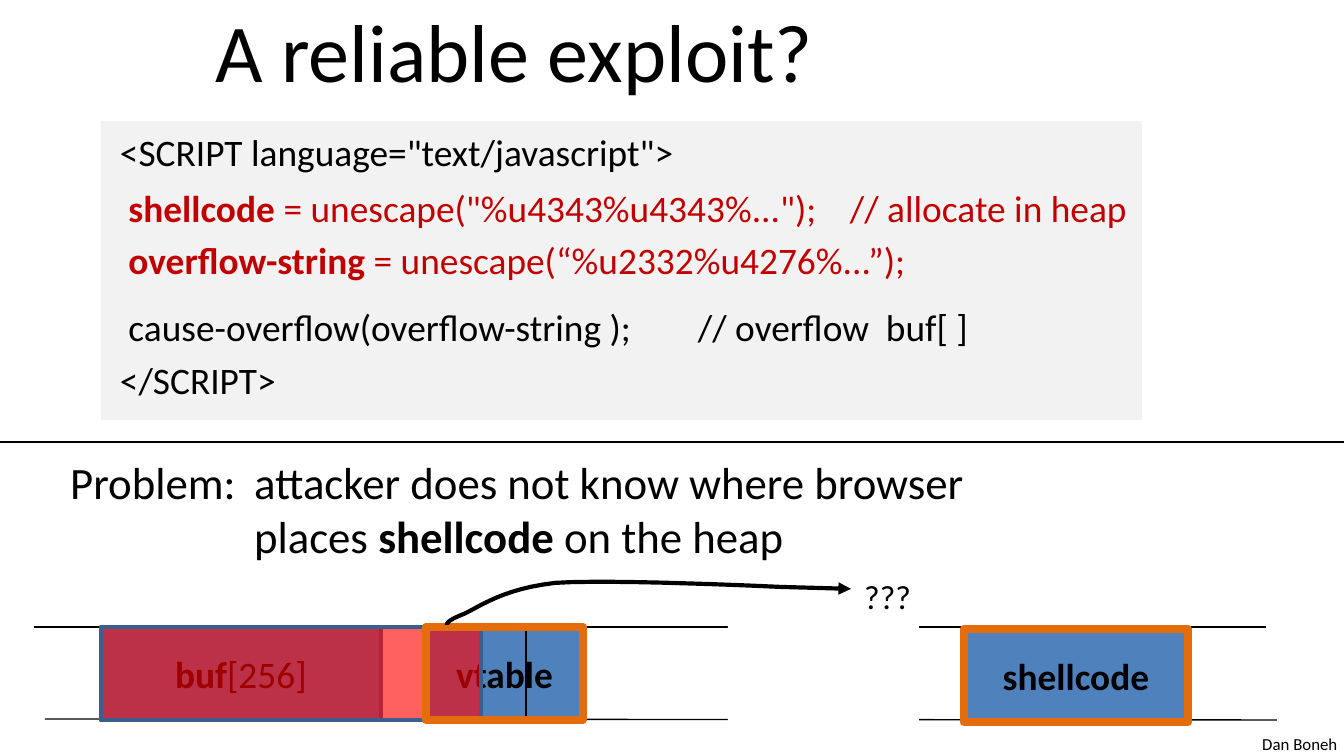
from lxml.etree import SubElement
from pptx import Presentation
from pptx.dml.color import RGBColor
from pptx.enum.shapes import MSO_CONNECTOR as CONNECTOR, MSO_SHAPE as SHAPE
from pptx.enum.text import MSO_ANCHOR as ANCHOR, PP_ALIGN as ALIGN
from pptx.oxml.ns import qn
from pptx.util import Pt

PX = 914400 / 134.4  # EMU in one px
COLORS = {
    "black": "000000", "white": "FFFFFF", "panel": "F2F2F2", "code": "C00000",
    "block": "4F81BD", "edge": "3A5F8C", "overflow": "FF0000", "highlight": "E46C0A",
}


def add_box(box, fill=None, line=None, width=2):
    shape = slide.shapes.add_shape(SHAPE.RECTANGLE, *[round(v * PX) for v in box])
    shape.shadow.inherit = False
    if fill:
        shape.fill.solid()
        shape.fill.fore_color.rgb = RGBColor.from_string(COLORS[fill])
    else:
        shape.fill.background()
    if line:
        shape.line.color.rgb = RGBColor.from_string(COLORS[line])
        shape.line.width = Pt(width)
    else:
        shape.line.fill.background()
    return shape


def write(paragraph, parts, size, color="black"):
    """Fill a paragraph with (text, bold) parts."""
    for text, bold in parts:
        run = paragraph.add_run()
        run.text = text
        run.font.name = "Calibri"
        run.font.size = Pt(size)
        run.font.bold = bold
        run.font.color.rgb = RGBColor.from_string(COLORS[color])


presentation = Presentation()
presentation.slide_width = round(1344 * PX)
presentation.slide_height = round(756 * PX)
slide = presentation.slides.add_slide(presentation.slide_layouts[6])

# Code panel: parts, colour, space before, tab stop in px
code_lines = [
    ([('<SCRIPT language="text/javascript">', False)], "black", 0, None),
    ([(" ", False), ("shellcode", True),
      (' = unescape("%u4343%u4343%...");\t// allocate in heap', False)], "code", 6, 730),
    ([(" ", False), ("overflow-string", True),
      (" = unescape(“%u2332%u4276%...”);", False)], "code", 4, None),
    ([(" cause-overflow(overflow-string );\t// overflow  buf[ ]", False)], "black", 12, 578),
    ([("</SCRIPT>", False)], "black", 4, None),
]
panel = add_box((101, 121, 1041, 299), "panel")
frame = panel.text_frame
frame.word_wrap = True
frame.vertical_anchor = ANCHOR.TOP
frame.margin_left, frame.margin_right = round(19 * PX), 0
frame.margin_top = round(8 * PX)
for index, (parts, color, space, tab) in enumerate(code_lines):
    paragraph = frame.add_paragraph() if index else frame.paragraphs[0]
    paragraph.alignment = ALIGN.LEFT
    paragraph.space_before = Pt(space)
    write(paragraph, parts, 20, color)
    if tab:
        tabs = SubElement(paragraph._p.get_or_add_pPr(), qn("a:tabLst"))
        SubElement(tabs, qn("a:tab"), pos=str(round(tab * PX)), algn="l")

# Title, problem statement, unknown address, footer
labels = [
    ((202, 0, 1008, 100), [("A reliable exploit?", False)], 44, ANCHOR.MIDDLE, 0),
    ((57, 448, 1210, 124), [("Problem:\tattacker does not know where browser \vplaces ", False),
                            ("shellcode", True), (" on the heap", False)], 24, ANCHOR.TOP, 184),
    ((851, 569, 74, 53), [("???", False)], 18, ANCHOR.TOP, 0),
    ((1249, 727, 95, 29), [("Dan Boneh", False)], 9, ANCHOR.TOP, 0),
]

# Memory blocks
buffer_box = (101, 627, 280, 93)
vtable_box = (426, 627, 157, 93)
shellcode_box = (964, 629, 224, 93)
overflow_box = (101, 627, 380, 93)
blocks = [
    (buffer_box, [("buf", True), ("[256]", False)]),
    (shellcode_box, [("shellcode", True)]),
    (vtable_box, [("vtable", True)]),
]
for box, parts in blocks:
    block = add_box(box, "block", "edge")
    block.text_frame.vertical_anchor = ANCHOR.MIDDLE
    block.text_frame.paragraphs[0].alignment = ALIGN.CENTER
    write(block.text_frame.paragraphs[0], parts, 20)

# Heap edges, vtable dividers and the rule across the slide
for x1, y1, x2, y2 in [
    (34, 627, 1266, 627), (45, 719, 1277, 720),
    (481, 627, 481, 719), (526, 627, 526, 719), (0, 442, 1344, 442),
]:
    line = slide.shapes.add_connector(CONNECTOR.STRAIGHT, *[round(v * PX) for v in (x1, y1, x2, y2)])
    line.line.color.rgb = RGBColor.from_string(COLORS["black"])
    line.line.width = Pt(0.75)
    SubElement(line._element.spPr, qn("a:effectLst"))

# Overflowing data, translucent
overflow = add_box(overflow_box, "overflow", "edge")
red = overflow._element.spPr.find(qn("a:solidFill")).find(qn("a:srgbClr"))
SubElement(red, qn("a:alpha"), val="62000")

# Highlights, then the gap in the heap
for box in (shellcode_box, vtable_box):
    add_box(box, line="highlight", width=4.5)
add_box((728, 618, 191, 118), "white")

# Curved pointer from the vtable to an unknown address
start = (447, 625)
curves = [
    ((447, 624), (446, 621), (464, 614)),
    ((481, 606), (503, 589), (555, 583)),
    ((609, 579), (780, 587), (780, 587)),
]
points = []
origin = start
for first, second, end in curves:
    for step in range(1, 13):
        t = step / 12
        points.append(tuple(
            (1 - t) ** 3 * a + 3 * (1 - t) ** 2 * t * b + 3 * (1 - t) * t ** 2 * c + t ** 3 * d
            for a, b, c, d in zip(origin, first, second, end)))
    origin = end
points.append((851, 589))
builder = slide.shapes.build_freeform(*[round(v * PX) for v in start], scale=1.0)
builder.add_line_segments([(round(x * PX), round(y * PX)) for x, y in points], close=False)
pointer = builder.convert_to_shape()
pointer.shadow.inherit = False
pointer.fill.background()
pointer.line.color.rgb = RGBColor.from_string(COLORS["black"])
pointer.line.width = Pt(2.25)
SubElement(pointer.line._get_or_add_ln(), qn("a:tailEnd"), type="triangle")

# Free text, on top
for box, parts, size, anchor, hanging in labels:
    label = slide.shapes.add_textbox(*[round(v * PX) for v in box])
    frame = label.text_frame
    frame.word_wrap = True
    frame.vertical_anchor = anchor
    frame.margin_right = 0
    paragraph = frame.paragraphs[0]
    if hanging:
        properties = paragraph._p.get_or_add_pPr()
        properties.set("marL", str(round(hanging * PX)))
        properties.set("indent", str(-round(hanging * PX)))
    for text, bold in parts:
        before, *after = text.split("\v")
        write(paragraph, [(before, bold)], size)
        for rest in after:
            paragraph.add_line_break()
            write(paragraph, [(rest, bold)], size)

presentation.save("out.pptx")
